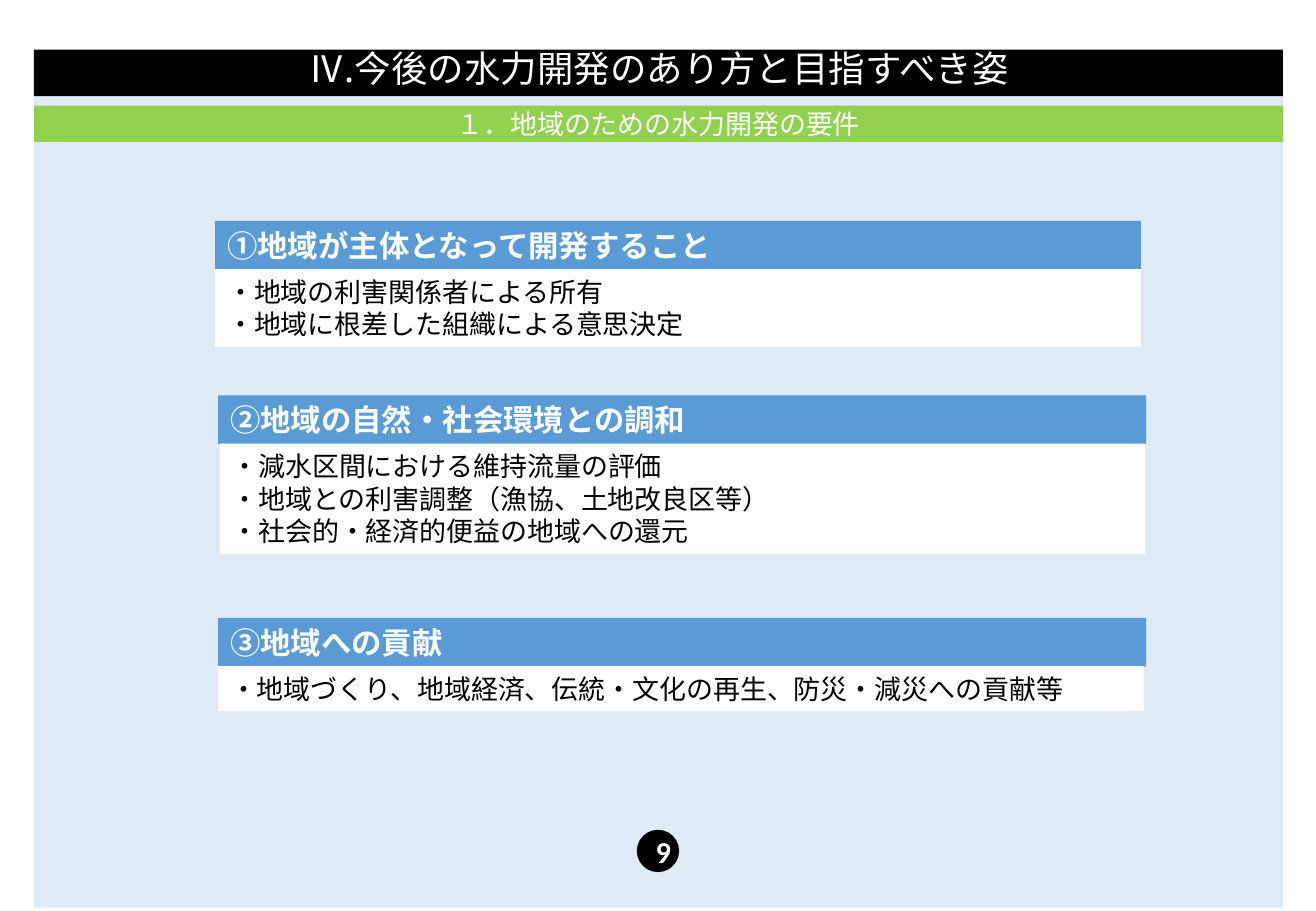
import pptx
import pptx.dml.color
import pptx.enum.shapes
import pptx.enum.text
import pptx.oxml.ns
import pptx.util
from dataclasses import dataclass

Cm = pptx.util.Cm
SHAPE = pptx.enum.shapes.MSO_SHAPE
ANCHOR = pptx.enum.text.MSO_ANCHOR
ALIGN = pptx.enum.text.PP_ALIGN


@dataclass
class Theme:
    black: str = "000000"
    white: str = "FFFFFF"
    backdrop: str = "DEEBF7"
    green: str = "92D050"
    blue: str = "5B9BD5"
    latin: str = "Calibri"
    japanese: str = "Noto Sans CJK JP"
    title_size: float = 21.6
    heading_size: float = 18
    body_size: float = 16


theme = Theme()
deck = pptx.Presentation()
deck.slide_width, deck.slide_height = Cm(27.51), Cm(19.05)
page = deck.slides.add_slide(deck.slide_layouts[6])


def add_panel(left, top, width, height, fill, kind=SHAPE.RECTANGLE):
    panel = page.shapes.add_shape(kind, Cm(left), Cm(top), Cm(width), Cm(height))
    panel.shadow.inherit = False
    panel.fill.solid()
    panel.fill.fore_color.rgb = pptx.dml.color.RGBColor.from_string(fill)
    panel.line.fill.background()
    return panel


def write(panel, text, size, color, font, bold=False, centered=True):
    """Centred text sits mid-panel; other text starts at the top left and sets the height."""
    frame = panel.text_frame
    frame.word_wrap = True
    frame.text = text
    frame.vertical_anchor = ANCHOR.MIDDLE if centered else ANCHOR.TOP
    if not centered:
        frame.auto_size = pptx.enum.text.MSO_AUTO_SIZE.SHAPE_TO_FIT_TEXT
    for para in frame.paragraphs:
        para.alignment = ALIGN.CENTER if centered else ALIGN.LEFT
        for span in para.runs:
            span.font.size = pptx.util.Pt(size)
            span.font.bold = bold
            span.font.color.rgb = pptx.dml.color.RGBColor.from_string(color)
            span.font.name = font
            east_asian = span.font._element.makeelement(pptx.oxml.ns.qn("a:ea"), {"typeface": font})
            span.font._element.append(east_asian)


# Backdrop and banners share one column
band_left, band_width = 0.71, 26.11
add_panel(band_left, 1.52, band_width, 17.46, theme.backdrop)

title = add_panel(band_left, 1.04, band_width, 0.97, theme.black)
write(title, "Ⅳ.今後の水力開発のあり方と目指すべき姿", theme.title_size, theme.white, theme.japanese)
title.text_frame.paragraphs[0].line_spacing = 0.7

subtitle = add_panel(band_left, 2.21, band_width, 0.76, theme.green)
write(subtitle, "１．地域のための水力開発の要件", theme.body_size, theme.white, theme.japanese)

page_number = add_panel(13.33, 17.37, 0.85, 0.85, theme.black, SHAPE.OVAL)
page_number.line.color.rgb = pptx.dml.color.RGBColor.from_string(theme.black)
page_number.line.width = pptx.util.Pt(1)
write(page_number, "9", theme.heading_size, theme.white, theme.latin, bold=True)

# Requirements: heading left, top, width; body left, height; heading; points
requirements = [
    (4.5, 4.62, 19.35, 4.5, 1.62, "①地域が主体となって開発すること",
     ["・地域の利害関係者による所有", "・地域に根差した組織による意思決定"]),
    (4.56, 8.27, 19.4, 4.59, 2.31, "②地域の自然・社会環境との調和",
     ["・減水区間における維持流量の評価", "・地域との利害調整（漁協、土地改良区等）",
      "・社会的・経済的便益の地域への還元"]),
    (4.56, 12.92, 19.4, 4.56, 0.94, "③地域への貢献",
     ["・地域づくり、地域経済、伝統・文化の再生、防災・減災への貢献等"]),
]
heading_height, body_width = 1.02, 19.35
for left, top, width, body_left, body_height, heading, points in requirements:
    heading_box = add_panel(left, top, width, heading_height, theme.blue)
    write(heading_box, heading, theme.heading_size, theme.white, theme.japanese,
          bold=True, centered=False)
    body_box = add_panel(body_left, top + heading_height - 0.01, body_width, body_height, theme.white)
    write(body_box, "\n".join(points), theme.body_size, theme.black, theme.latin, centered=False)

deck.save("out.pptx")
